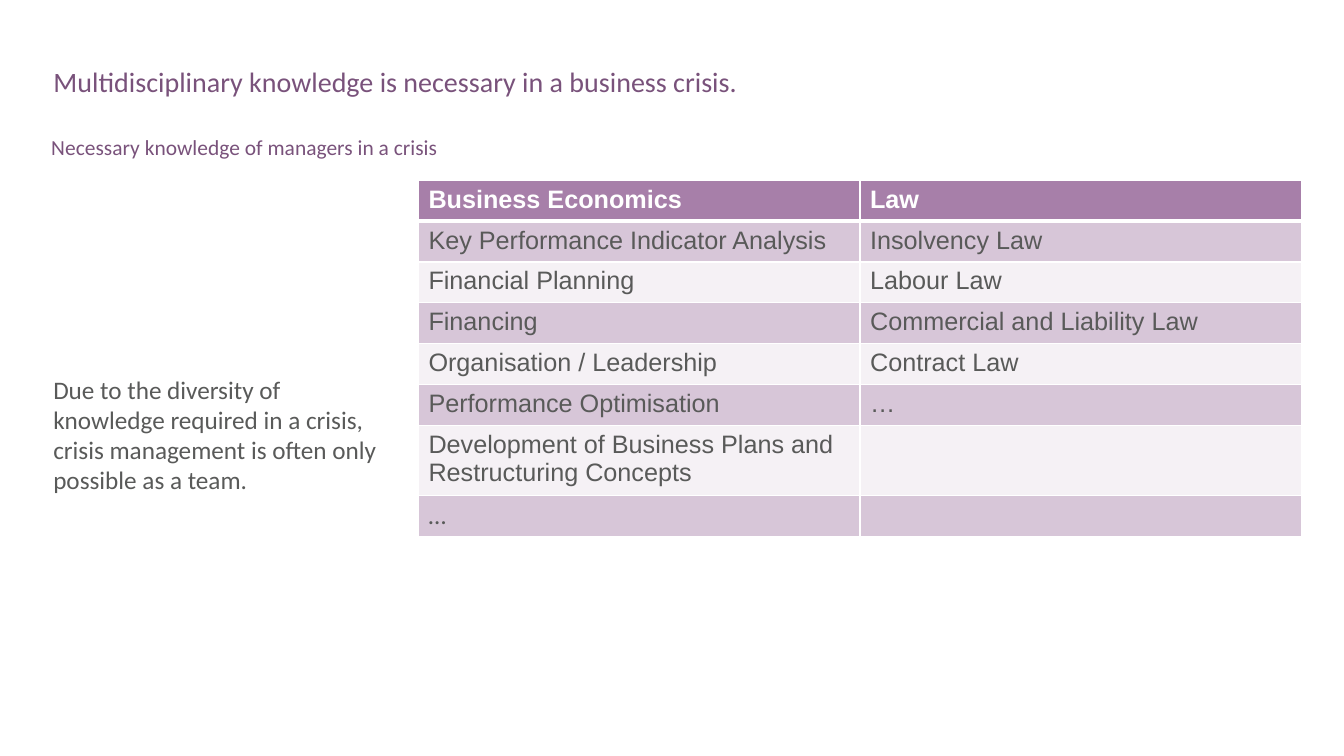
from lxml.etree import SubElement
from pptx import Presentation
from pptx.dml.color import RGBColor
from pptx.enum.text import MSO_ANCHOR, PP_ALIGN
from pptx.oxml.ns import qn
from pptx.util import Inches, Pt

WHITE = RGBColor(0xFF, 0xFF, 0xFF)
PLUM = RGBColor(0x79, 0x52, 0x7B)
GREY = RGBColor(0x59, 0x5A, 0x59)
HEADER = RGBColor(0xA7, 0x7F, 0xA9)
BAND_DARK = RGBColor(0xD7, 0xC6, 0xD8)
BAND_LIGHT = RGBColor(0xF5, 0xF1, 0xF5)

KNOWLEDGE = [
    ("Business Economics", "Law"),
    ("Key Performance Indicator Analysis", "Insolvency Law"),
    ("Financial Planning", "Labour Law"),
    ("Financing", "Commercial and Liability Law"),
    ("Organisation / Leadership", "Contract Law"),
    ("Performance Optimisation", "…"),
    ("Development of Business Plans and Restructuring Concepts", ""),
    ("…", ""),
]


def write(tf, text, size=18, color=GREY, font="Calibri", bold=False,
          spacing=1.0, anchor=MSO_ANCHOR.TOP):
    tf.word_wrap = True
    tf.vertical_anchor = anchor
    p = tf.paragraphs[0]
    p.alignment = PP_ALIGN.LEFT
    p.line_spacing = spacing
    r = p.add_run()
    r.text = text
    r.font.size = Pt(size)
    r.font.name = font
    r.font.bold = bold
    r.font.color.rgb = color


class SlideBuilder:
    def __init__(self, prs):
        self.s = prs.slides.add_slide(prs.slide_layouts[5])

    def title(self, box, text, **style):
        sp = self.s.shapes.title
        sp.left, sp.top, sp.width, sp.height = map(Inches, box)
        write(sp.text_frame, text, **style)

    def text(self, box, text, **style):
        sp = self.s.shapes.add_textbox(*map(Inches, box))
        write(sp.text_frame, text, **style)

    def border(self, cell, side, width):
        ln = SubElement(cell._tc.get_or_add_tcPr(), qn(f"a:{side}"), w=str(Pt(width)))
        fill = SubElement(ln, qn("a:solidFill"))
        SubElement(fill, qn("a:srgbClr"), val=str(WHITE))

    def table(self, box, rows, row_height):
        frame = self.s.shapes.add_table(len(rows), len(rows[0]), *map(Inches, box))
        table = frame.table
        for i, row in enumerate(rows):
            table.rows[i].height = row_height
            for j, text in enumerate(row):
                cell = table.cell(i, j)
                # The rule between header and body is thicker
                self.border(cell, "lnL", 1)
                self.border(cell, "lnR", 1)
                self.border(cell, "lnT", 3 if i == 1 else 1)
                self.border(cell, "lnB", 3 if i == 0 else 1)
                cell.fill.solid()
                if i == 0:
                    cell.fill.fore_color.rgb = HEADER
                else:
                    cell.fill.fore_color.rgb = BAND_DARK if i % 2 else BAND_LIGHT
                if text:
                    last = i == len(rows) - 1
                    write(cell.text_frame, text, bold=i == 0,
                          color=GREY if i else WHITE,
                          font="Calibri" if last else "Arial")


def main():
    prs = Presentation()
    prs.slide_width, prs.slide_height = Inches(13.33), Inches(7.5)
    slide = SlideBuilder(prs)

    # Headings
    slide.title((0.43, 0.63, 12.54, 0.64),
                "Multidisciplinary knowledge is necessary in a business crisis.",
                size=20, color=PLUM, spacing=0.9)
    slide.text((0.41, 1.35, 12.56, 0.28),
               "Necessary knowledge of managers in a crisis",
               size=15.3, color=PLUM, spacing=0.7)

    # Conclusion beside the table
    slide.text((0.43, 1.79, 3.49, 5.04),
               "Due to the diversity of knowledge required in a crisis, "
               "crisis management is often only possible as a team.",
               anchor=MSO_ANCHOR.MIDDLE)

    # Knowledge table: the six single-line rows span 2.43 inches
    slide.table((4.15, 1.79, 8.76, 3.54), KNOWLEDGE, Inches(2.43) // 6)

    prs.save("out.pptx")


if __name__ == "__main__":
    main()
